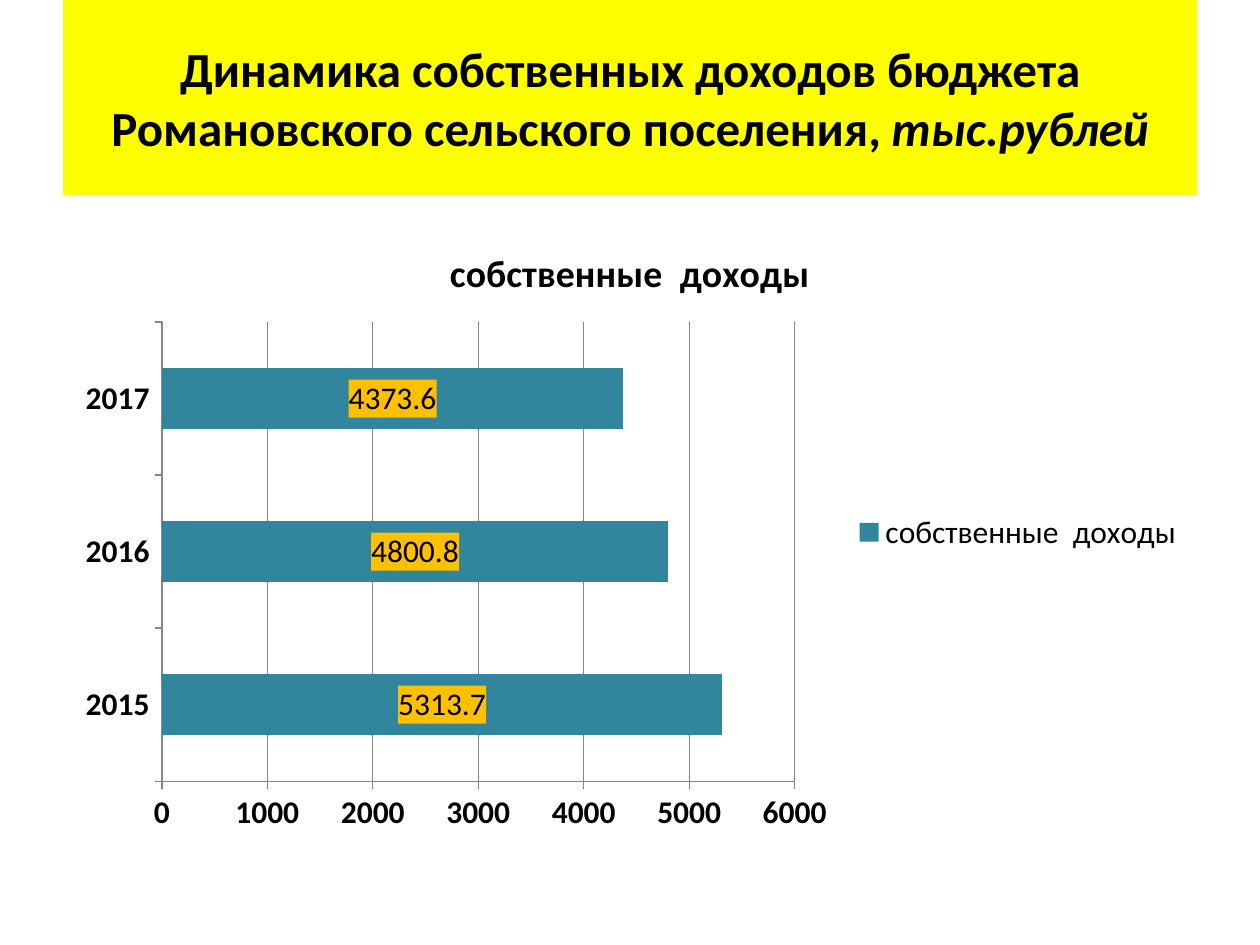
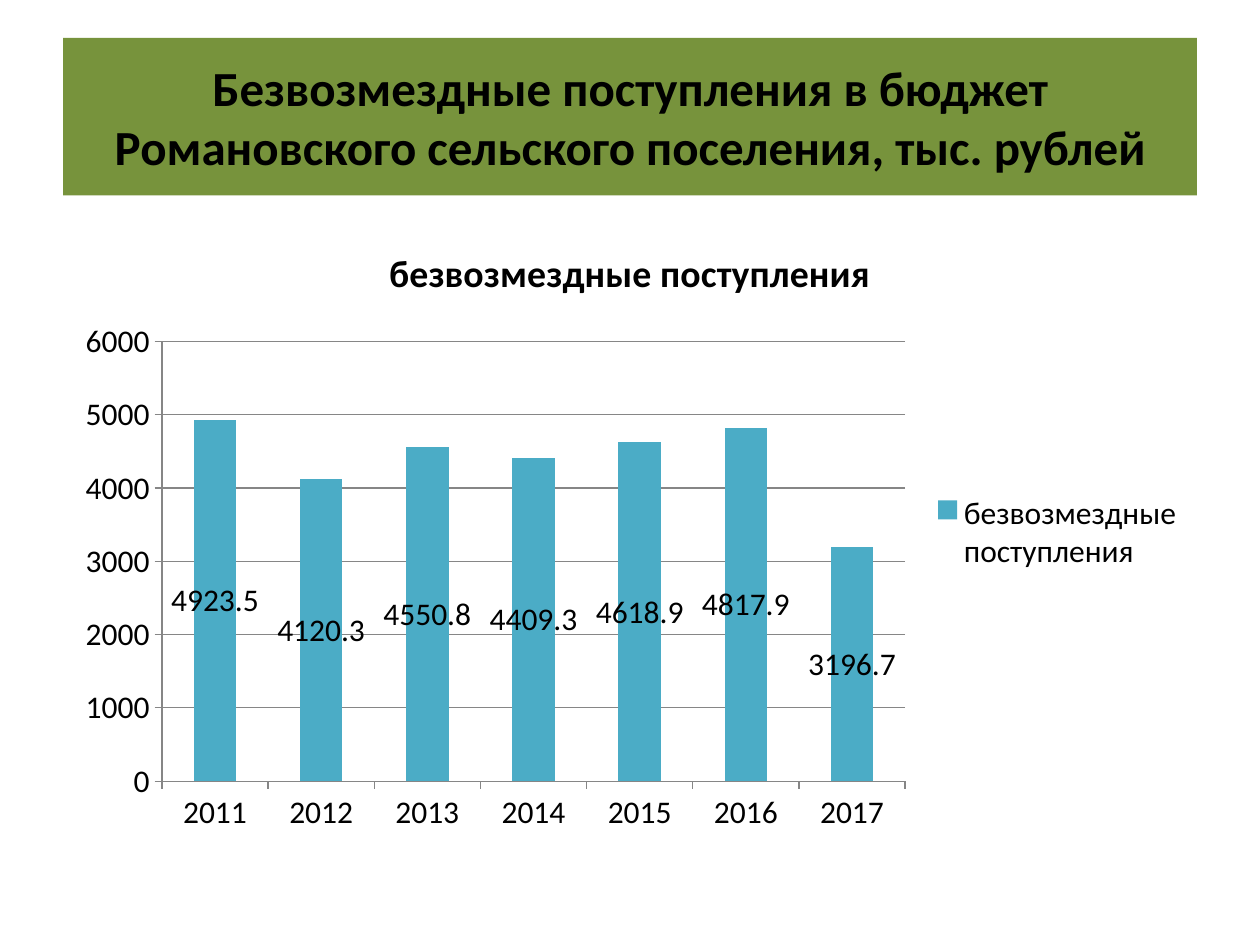
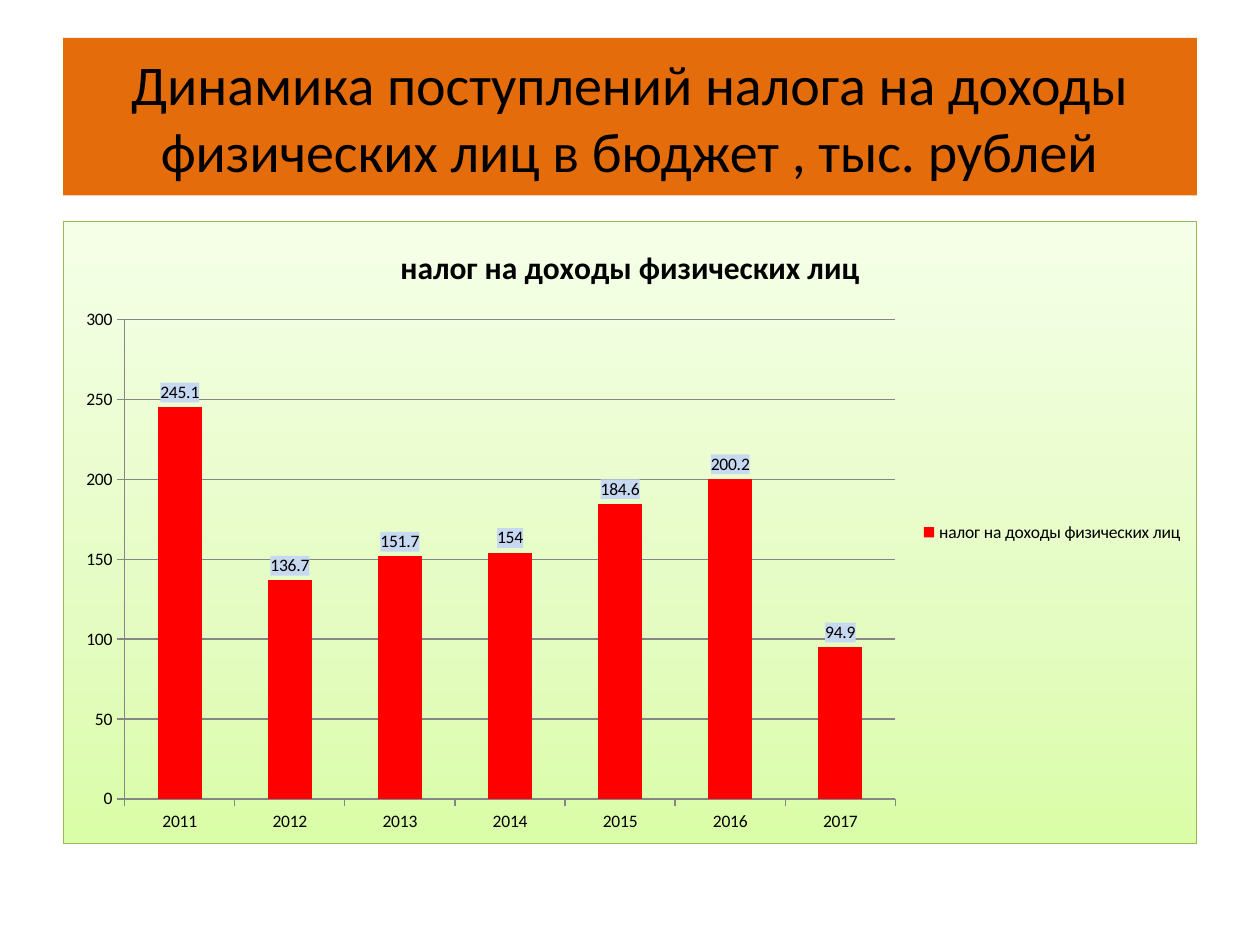
from lxml import etree
from pptx import Presentation
from pptx.chart.data import CategoryChartData
from pptx.dml.color import RGBColor
from pptx.enum.chart import XL_CHART_TYPE as CT, XL_LABEL_POSITION as LP
from pptx.enum.chart import XL_LEGEND_POSITION, XL_TICK_MARK
from pptx.enum.text import MSO_ANCHOR, PP_ALIGN
from pptx.oxml import parse_xml
from pptx.oxml.ns import nsdecls, qn
from pptx.util import Inches, Pt

FONT = "Calibri"
COLORS = {
    "text": "000000", "axis": "868686",
    "yellow": "FFFF00", "green": "77933C", "orange": "E46C0A",
    "teal": "31859C", "aqua": "4BACC6", "red": "FF0000",
    "label_gold": "FFC000", "label_blue": "C6D9F1", "border": "98B955",
    "lime": "DAFDA7", "pale_lime": "E4FCC2", "mist": "F5FFE7",
}
YEARS = [str(year) for year in range(2011, 2018)]

# Shared layout
MARGIN, CONTENT_W = Inches(0.5), Inches(9)
TITLE_BOTTOM = Inches(1.55)
CHART_TOP, CHART_H = Inches(1.75), Inches(4.95)


def rgb(name):
    return RGBColor.from_string(COLORS[name])


def set_font(font, size, bold=False):
    font.name, font.size, font.bold = FONT, Pt(size), bold
    font.color.rgb = rgb("text")


def add_title(s, parts, fill, top=0.3, size=28, bold=True):
    """Fill the title band; parts are (text, italic) pairs."""
    sp = s.shapes.title
    sp.left, sp.top, sp.width = MARGIN, Inches(top), CONTENT_W
    sp.height = TITLE_BOTTOM - sp.top
    sp.fill.solid()
    sp.fill.fore_color.rgb = rgb(fill)
    tf = sp.text_frame
    tf.vertical_anchor = MSO_ANCHOR.MIDDLE
    p = tf.paragraphs[0]
    p.alignment = PP_ALIGN.CENTER
    for text, italic in parts:
        r = p.add_run()
        r.text = text
        set_font(r.font, size, bold)
        r.font.italic = italic


def style_axis(axis, size, bold, grid):
    set_font(axis.tick_labels.font, size, bold)
    axis.major_tick_mark = XL_TICK_MARK.OUTSIDE
    axis.minor_tick_mark = XL_TICK_MARK.NONE
    axis.has_major_gridlines = grid
    lines = [axis.format.line]
    if grid:
        lines.append(axis.major_gridlines.format.line)
    for line in lines:
        line.color.rgb = rgb("axis")
        line.width = Pt(0.75)


def add_chart(s, kind, name, cats, vals, color, size=18, title_size=21.6,
              bold_axes=False, label_pos=LP.CENTER, label_fill=None):
    data = CategoryChartData()
    data.categories = cats
    data.add_series(name, vals)
    chart = s.shapes.add_chart(kind, MARGIN, CHART_TOP, CONTENT_W, CHART_H,
                               data).chart
    set_font(chart.font, size)
    chart.has_title = True
    tf = chart.chart_title.text_frame
    tf.text = name
    set_font(tf.paragraphs[0].runs[0].font, title_size, True)

    chart.has_legend = True
    chart.legend.position = XL_LEGEND_POSITION.RIGHT
    chart.legend.include_in_layout = False
    set_font(chart.legend.font, size)
    style_axis(chart.category_axis, size, bold_axes, False)
    style_axis(chart.value_axis, size, bold_axes, True)

    plot = chart.plots[0]
    plot.vary_by_categories = False
    plot.gap_width = 150
    series = plot.series[0]
    series.format.fill.solid()
    series.format.fill.fore_color.rgb = rgb(color)
    labels = series.data_labels
    labels.show_value = True
    labels.position = label_pos
    set_font(labels.font, size)
    if label_fill:
        fill_labels(chart, label_fill)
    return chart


def fill_labels(chart, color):
    """Put a solid background behind the data labels."""
    for tx_pr in chart.element.xpath(".//c:ser/c:dLbls/c:txPr"):
        tx_pr.addprevious(parse_xml(
            f'<c:spPr {nsdecls("c", "a")}><a:solidFill>'
            f'<a:srgbClr val="{COLORS[color]}"/></a:solidFill></c:spPr>'))


def fill_chart_area(chart, stops, angle, border):
    """Give the chart area a linear gradient and a thin border."""
    sp_pr = parse_xml(
        f'<c:spPr {nsdecls("c", "a")}><a:gradFill><a:gsLst/>'
        f'<a:lin ang="{angle * 60000}" scaled="1"/></a:gradFill>'
        f'<a:ln w="{Pt(0.75)}"><a:solidFill>'
        f'<a:srgbClr val="{COLORS[border]}"/></a:solidFill></a:ln></c:spPr>')
    stop_list = sp_pr.find(".//" + qn("a:gsLst"))
    for percent, color in stops:
        stop = etree.SubElement(stop_list, qn("a:gs"), pos=str(percent * 1000))
        etree.SubElement(stop, qn("a:srgbClr"), val=COLORS[color])
    chart.element.find(qn("c:chart")).addnext(sp_pr)


def main():
    prs = Presentation()
    prs.slide_width, prs.slide_height = Inches(10), Inches(7.5)
    title_only = prs.slide_layouts[5]

    # Own revenues
    s = prs.slides.add_slide(title_only)
    add_title(s, [("Динамика собственных доходов бюджета Романовского "
                   "сельского поселения, ", False), ("тыс.рублей", True)],
              "yellow", top=0)
    add_chart(s, CT.BAR_STACKED, "собственные  доходы", YEARS[-3:],
              [5313.7, 4800.8, 4373.6], "teal", bold_axes=True,
              label_fill="label_gold")

    # Grants
    s = prs.slides.add_slide(title_only)
    add_title(s, [("Безвозмездные поступления в бюджет Романовского "
                   "сельского поселения, тыс. рублей", False)], "green")
    add_chart(s, CT.COLUMN_STACKED, "безвозмездные поступления", YEARS,
              [4923.5, 4120.3, 4550.8, 4409.3, 4618.9, 4817.9, 3196.7], "aqua")

    # Personal income tax
    s = prs.slides.add_slide(title_only)
    add_title(s, [("Динамика поступлений налога на доходы физических лиц "
                   "в бюджет , тыс. рублей", False)],
              "orange", size=32, bold=False)
    chart = add_chart(s, CT.COLUMN_CLUSTERED, "налог на доходы физических лиц",
                      YEARS, [245.1, 136.7, 151.7, 154, 184.6, 200.2, 94.9],
                      "red", size=10, title_size=18,
                      label_pos=LP.OUTSIDE_END, label_fill="label_blue")
    fill_chart_area(chart, [(0, "lime"), (35, "pale_lime"), (100, "mist")],
                    270, "border")

    prs.save("out.pptx")


if __name__ == "__main__":
    main()
